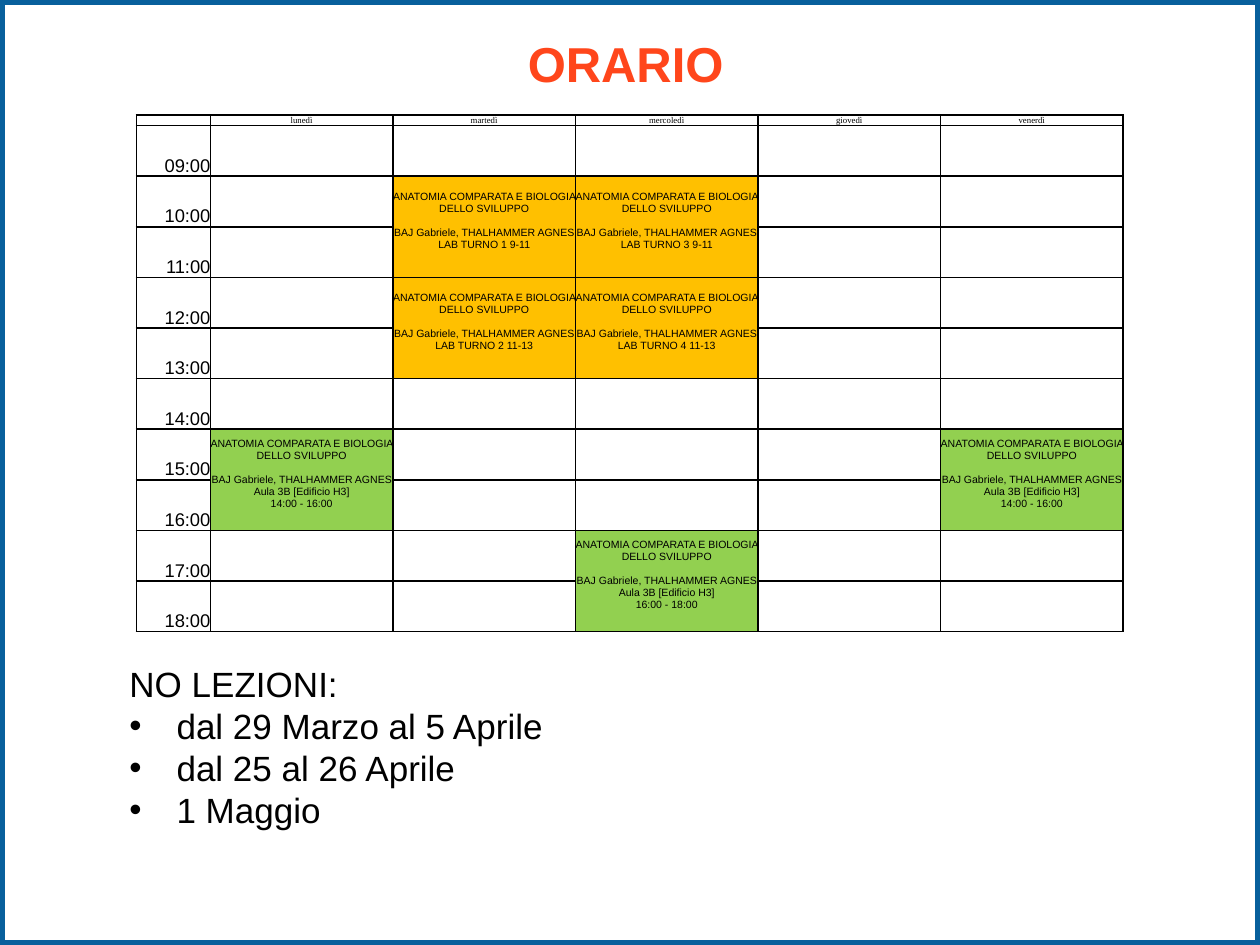
import pptx
import pptx.util
import pptx.dml.color
import pptx.enum.shapes
import pptx.enum.text
import pptx.oxml.ns
from lxml import etree

Cm = pptx.util.Cm
Pt = pptx.util.Pt
RGBColor = pptx.dml.color.RGBColor
Align = pptx.enum.text.PP_ALIGN
Anchor = pptx.enum.text.MSO_ANCHOR
qn = pptx.oxml.ns.qn

BLACK = RGBColor(0x00, 0x00, 0x00)
BLUE = RGBColor(0x08, 0x60, 0x9C)
RED = RGBColor(0xFF, 0x46, 0x1B)
AMBER = RGBColor(0xFF, 0xC0, 0x00)
GREEN = RGBColor(0x92, 0xD0, 0x50)

TITLE = "ORARIO"
DAYS = ["lunedì", "martedì", "mercoledì", "giovedì", "venerdì"]
HOURS = [f"{hour:02d}:00" for hour in range(9, 19)]
COURSE = "ANATOMIA COMPARATA E BIOLOGIA DELLO SVILUPPO"
TEACHERS = "BAJ Gabriele, THALHAMMER AGNES"
ROOM = "Aula 3B [Edificio H3]"
LESSONS = [
    ("martedì", "10:00", AMBER, ["LAB TURNO 1 9-11"]),
    ("mercoledì", "10:00", AMBER, ["LAB TURNO 3 9-11"]),
    ("martedì", "12:00", AMBER, ["LAB TURNO 2 11-13"]),
    ("mercoledì", "12:00", AMBER, ["LAB TURNO 4 11-13"]),
    ("lunedì", "15:00", GREEN, [ROOM, "14:00 - 16:00"]),
    ("venerdì", "15:00", GREEN, [ROOM, "14:00 - 16:00"]),
    ("mercoledì", "17:00", GREEN, [ROOM, "16:00 - 18:00"]),
]
BREAKS_TITLE = "NO LEZIONI:"
BREAKS = ["dal 29 Marzo al 5 Aprile", "dal 25 al 26 Aprile", "1 Maggio"]

HOUR_WIDTH, DAY_WIDTH = Cm(1.49), Cm(3.68)
HEADER_HEIGHT, HOUR_HEIGHT = Cm(0.2), Cm(1.02)
LESSON_LINE = Pt(7)


def add_span(para, text, size, color=BLACK, font="Arial", bold=False):
    span = para.add_run()
    span.text = text
    span.font.size = Pt(size)
    span.font.name = font
    span.font.bold = bold
    span.font.color.rgb = color


def add_bullet(para):
    properties = para._p.get_or_add_pPr()
    properties.set("marL", str(Cm(0.95)))
    properties.set("indent", str(-Cm(0.95)))
    etree.SubElement(properties, qn("a:buFont")).set("typeface", "Arial")
    etree.SubElement(properties, qn("a:buChar")).set("char", "•")


def style_cell(cell):
    cell.margin_left = cell.margin_right = cell.margin_top = cell.margin_bottom = 0
    cell.vertical_anchor = Anchor.BOTTOM
    cell.fill.background()
    properties = cell._tc.get_or_add_tcPr()
    for index, side in enumerate(("a:lnL", "a:lnR", "a:lnT", "a:lnB")):
        line = etree.Element(qn(side), w=str(Pt(1)))
        fill = etree.SubElement(line, qn("a:solidFill"))
        etree.SubElement(fill, qn("a:srgbClr")).set("val", str(BLACK))
        properties.insert(index, line)
    paragraph = cell.text_frame.paragraphs[0]._p
    etree.SubElement(paragraph, qn("a:endParaRPr")).set("sz", "500")


def fill_label(cell, text, size, font, align):
    para = cell.text_frame.paragraphs[0]
    para.alignment = align
    add_span(para, text, size, font=font)


def fill_lesson(table, day, hour, color, details):
    row, column = HOURS.index(hour) + 1, DAYS.index(day) + 1
    cell = table.cell(row, column)
    cell.merge(table.cell(row + 1, column))
    cell.fill.solid()
    cell.fill.fore_color.rgb = color
    cell.vertical_anchor = Anchor.MIDDLE
    cell.margin_bottom = LESSON_LINE
    frame = cell.text_frame
    for index, text in enumerate([COURSE, TEACHERS, *details]):
        para = frame.add_paragraph() if index else frame.paragraphs[0]
        para.alignment = Align.CENTER
        if text == TEACHERS:
            para.space_before = LESSON_LINE
        add_span(para, text, 6)


def add_title(page):
    box = page.shapes.add_textbox(Cm(10.39), Cm(0.56), Cm(4.62), Cm(1.45))
    box.text_frame.word_wrap = False
    add_span(box.text_frame.paragraphs[0], TITLE, 28, RED, bold=True)


def add_border(page, deck):
    border = page.shapes.add_shape(pptx.enum.shapes.MSO_SHAPE.RECTANGLE,
                                   0, 0, deck.slide_width, deck.slide_height)
    border.shadow.inherit = False
    border.fill.background()
    border.line.color.rgb = BLUE
    border.line.width = Pt(6)


def add_timetable(page):
    width = HOUR_WIDTH + DAY_WIDTH * len(DAYS)
    height = HEADER_HEIGHT + HOUR_HEIGHT * len(HOURS)
    table = page.shapes.add_table(len(HOURS) + 1, len(DAYS) + 1,
                                  Cm(2.75), Cm(2.32), width, height).table
    table.first_row = table.horz_banding = False
    for index, column in enumerate(table.columns):
        column.width = DAY_WIDTH if index else HOUR_WIDTH
    for index, row in enumerate(table.rows):
        row.height = HOUR_HEIGHT if index else HEADER_HEIGHT
    for cell in table.iter_cells():
        style_cell(cell)
    for index, day in enumerate(DAYS, 1):
        fill_label(table.cell(0, index), day, 5, "Times New Roman", Align.CENTER)
    for index, hour in enumerate(HOURS, 1):
        fill_label(table.cell(index, 0), hour, 10.5, "Arial", Align.RIGHT)
    for lesson in LESSONS:
        fill_lesson(table, *lesson)


def add_breaks(page):
    box = page.shapes.add_textbox(Cm(2.36), Cm(13.23), Cm(20.7), Cm(3.68))
    frame = box.text_frame
    frame.word_wrap = True
    add_span(frame.paragraphs[0], BREAKS_TITLE, 20)
    for text in BREAKS:
        para = frame.add_paragraph()
        add_bullet(para)
        add_span(para, text, 20)


def main():
    deck = pptx.Presentation()
    deck.slide_width, deck.slide_height = Cm(25.4), Cm(19.05)
    page = deck.slides.add_slide(deck.slide_layouts[6])
    add_title(page)
    add_border(page, deck)
    add_timetable(page)
    add_breaks(page)
    deck.save("out.pptx")


if __name__ == "__main__":
    main()
